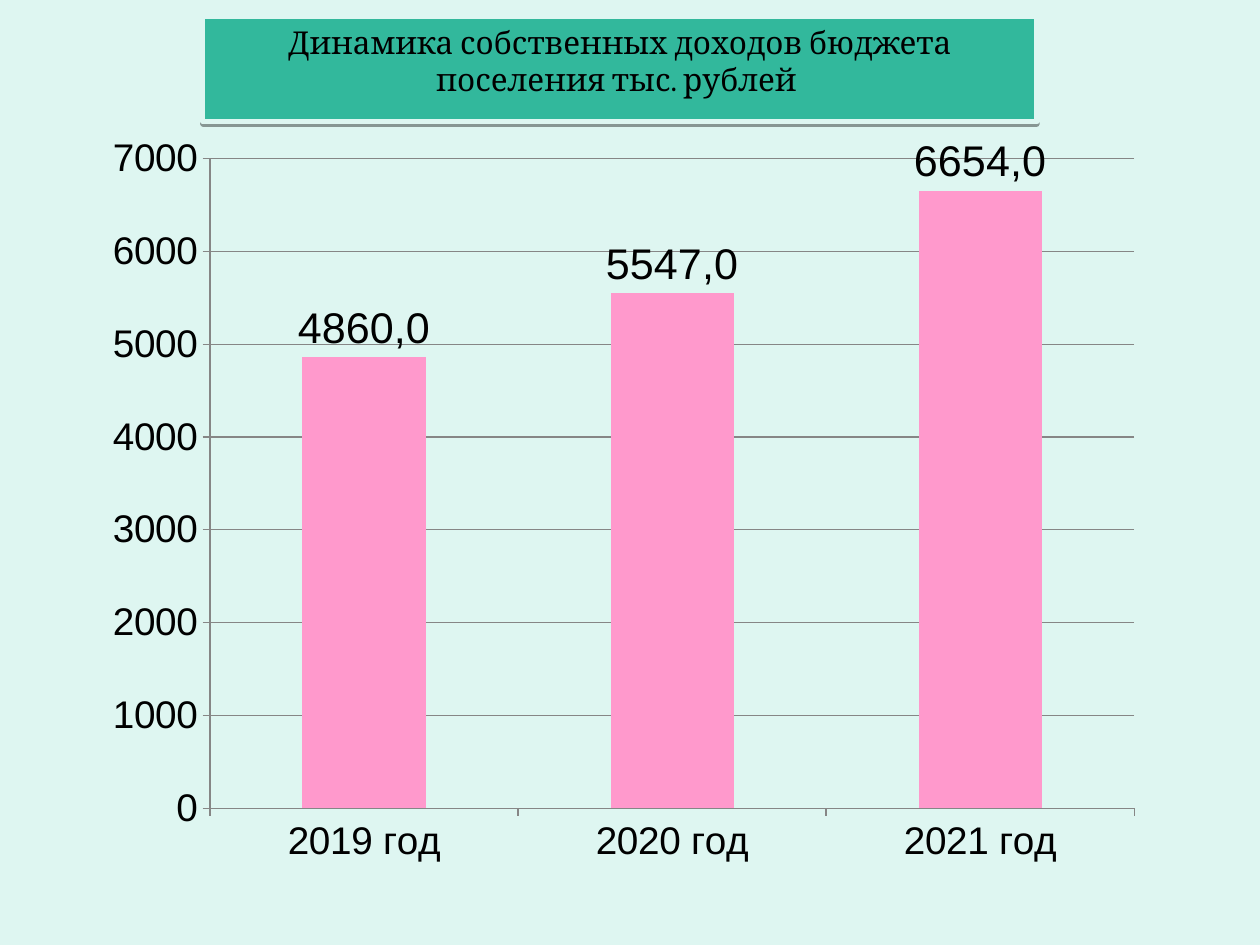
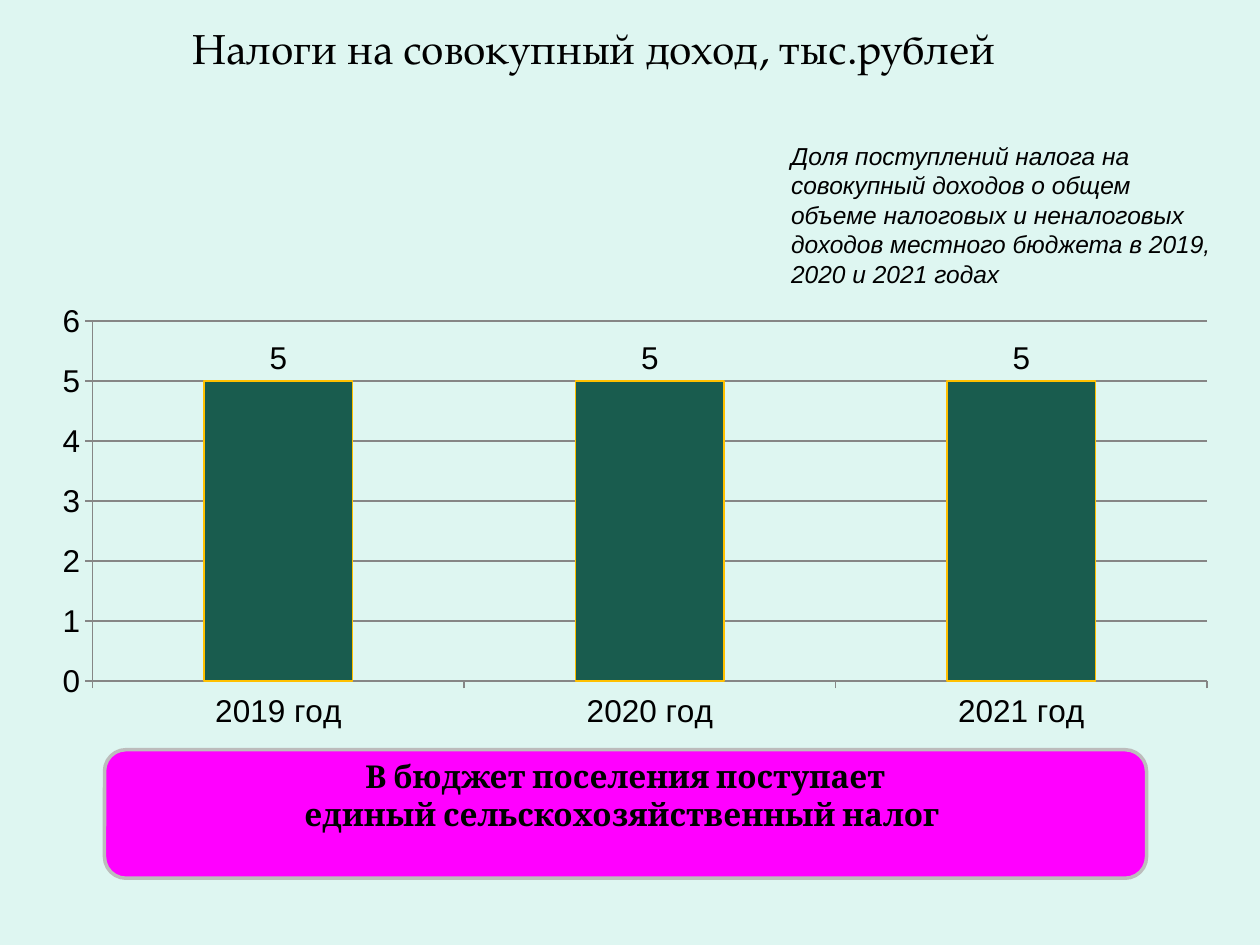
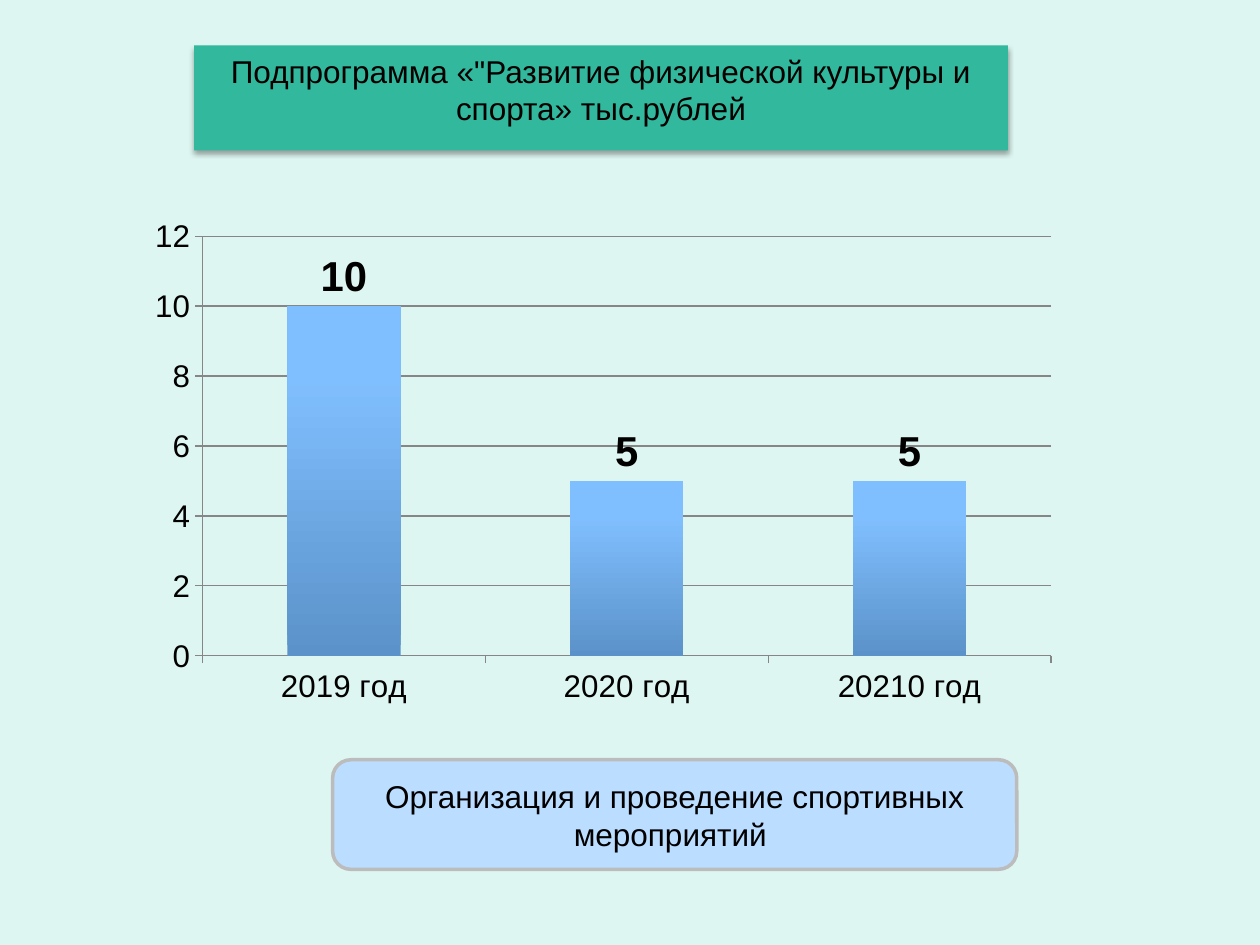
from dataclasses import dataclass

from lxml import etree
from pptx import Presentation
from pptx.chart.data import CategoryChartData
from pptx.dml.color import RGBColor
from pptx.enum.chart import XL_CHART_TYPE, XL_LABEL_POSITION, XL_TICK_MARK
from pptx.enum.shapes import MSO_SHAPE
from pptx.enum.text import MSO_ANCHOR, MSO_AUTO_SIZE, PP_ALIGN
from pptx.oxml.ns import qn
from pptx.util import Inches, Pt

COLUMNS = XL_CHART_TYPE.COLUMN_CLUSTERED
OUTSIDE_END = XL_LABEL_POSITION.OUTSIDE_END
TICK_OUT = XL_TICK_MARK.OUTSIDE
TICK_NONE = XL_TICK_MARK.NONE
ROUNDED = MSO_SHAPE.ROUNDED_RECTANGLE
TOP, MIDDLE = MSO_ANCHOR.TOP, MSO_ANCHOR.MIDDLE
GROW = MSO_AUTO_SIZE.SHAPE_TO_FIT_TEXT
FIXED = MSO_AUTO_SIZE.NONE
LEFT, CENTER = PP_ALIGN.LEFT, PP_ALIGN.CENTER

COLORS = {
    "background": "DEF6F1",
    "text": "000000",
    "band": "32B89C",
    "grid": "868686",
    "pink": "FF99CC",
    "green": "195C4E",
    "gold": "FFC000",
    "magenta": "FF00FF",
    "pale_blue": "BBDDFF",
    "sky": "80BFFF",
    "steel": "5B92C9",
    "border": "BCBCBC",
}
TITLE_ONLY_LAYOUT = 5


@dataclass
class Area:
    left: float
    top: float
    width: float
    height: float

    def lengths(self):
        return [Inches(side) for side in (self.left, self.top, self.width, self.height)]


@dataclass
class Shadow:
    blur: float
    distance: float
    opacity: int


@dataclass
class Title:
    text: str
    area: Area
    font: str
    size: float = 18
    fill: str | None = None
    line: str | None = None
    shadow: Shadow | None = None


@dataclass
class ColumnChart:
    area: Area
    plot: Area
    categories: tuple[str, ...]
    values: tuple[float, ...]
    maximum: float
    step: float
    size: float
    label_size: float
    fill: str
    fill_end: str | None = None
    line: str | None = None
    label_bold: bool = False
    label_format: str = "General"


@dataclass
class Callout:
    lines: tuple[str, ...]
    area: Area
    fill: str
    font: str
    bold: bool = False
    bottom_inset: float = 0.05


def color(name: str) -> RGBColor:
    return RGBColor.from_string(COLORS[name])


def style_font(font, *, name="Arial", size=18.0, bold=False, italic=False):
    font.name = name
    font.size = Pt(size)
    font.bold = bold
    font.italic = italic
    font.color.rgb = color("text")


def write(box, *lines: str, align=CENTER, anchor=TOP, fit=FIXED, **font_format):
    frame = box.text_frame
    frame.word_wrap = True
    frame.auto_size = fit
    frame.vertical_anchor = anchor
    for index, line in enumerate(lines):
        para = frame.add_paragraph() if index else frame.paragraphs[0]
        para.alignment = align
        span = para.add_run()
        span.text = line
        style_font(span.font, **font_format)


def paint(target, fill: str, line: str | None = None, width: float = 0.75):
    target.fill.solid()
    target.fill.fore_color.rgb = color(fill)
    if line:
        target.line.color.rgb = color(line)
        target.line.width = Pt(width)
    else:
        target.line.fill.background()


def add_shadow(box, shadow: Shadow):
    effects = etree.SubElement(box.element.spPr, qn("a:effectLst"))
    outer = etree.SubElement(
        effects, qn("a:outerShdw"), blurRad=str(Pt(shadow.blur)),
        dist=str(Pt(shadow.distance)), dir="5400000", rotWithShape="0",
    )
    shade = etree.SubElement(outer, qn("a:srgbClr"), val=COLORS["text"])
    etree.SubElement(shade, qn("a:alpha"), val=str(shadow.opacity * 1000))


def add_title(page, title: Title):
    box = page.shapes.title
    box.left, box.top, box.width, box.height = title.area.lengths()
    if title.fill:
        paint(box, title.fill, title.line, 3)
    if title.shadow:
        add_shadow(box, title.shadow)
    write(box, title.text, fit=GROW, name=title.font, size=title.size)


def add_callout(page, callout: Callout):
    box = page.shapes.add_shape(ROUNDED, *callout.area.lengths())
    box.shadow.inherit = False
    paint(box, callout.fill, "border", 2)
    box.text_frame.margin_bottom = Inches(callout.bottom_inset)
    write(box, *callout.lines, anchor=MIDDLE, name=callout.font, bold=callout.bold)


def place_plot(chart, plot: Area):
    plot_area = chart.element.find(".//" + qn("c:plotArea"))
    for old in plot_area.findall(qn("c:layout")):
        plot_area.remove(old)
    layout = etree.Element(qn("c:layout"))
    plot_area.insert(0, layout)
    manual = etree.SubElement(layout, qn("c:manualLayout"))
    settings = {
        "layoutTarget": "inner", "xMode": "edge", "yMode": "edge",
        "x": plot.left, "y": plot.top, "w": plot.width, "h": plot.height,
    }
    for tag, value in settings.items():
        etree.SubElement(manual, qn(f"c:{tag}"), val=str(value))


def add_column_chart(page, design: ColumnChart):
    data = CategoryChartData()
    data.categories = design.categories
    data.add_series("Series 1", design.values)
    chart = page.shapes.add_chart(COLUMNS, *design.area.lengths(), data).chart
    chart.has_legend = False
    chart.has_title = False
    style_font(chart.font, size=design.size)
    place_plot(chart, design.plot)

    for axis in (chart.category_axis, chart.value_axis):
        axis.major_tick_mark = TICK_OUT
        axis.minor_tick_mark = TICK_NONE
        axis.format.line.color.rgb = color("grid")
    chart.category_axis.has_major_gridlines = False
    scale = chart.value_axis
    scale.minimum_scale = 0
    scale.maximum_scale = design.maximum
    scale.major_unit = design.step
    scale.major_gridlines.format.line.color.rgb = color("grid")

    columns = chart.plots[0]
    columns.gap_width = 150
    columns.vary_by_categories = False
    columns.has_data_labels = True
    labels = columns.data_labels
    labels.show_value = True
    labels.position = OUTSIDE_END
    labels.number_format = design.label_format
    labels.number_format_is_linked = False
    style_font(labels.font, size=design.label_size, bold=design.label_bold)

    look = columns.series[0].format
    paint(look, design.fill, design.line)
    if design.fill_end:
        look.fill.gradient()
        look.fill.gradient_angle = 90
        bottom, top = look.fill.gradient_stops
        bottom.color.rgb = color(design.fill_end)
        top.color.rgb = color(design.fill)
        top.position = 0.8


def build_own_income(page):
    add_title(page, Title(
        "Динамика собственных доходов бюджета поселения тыс. рублей ",
        Area(1.61, 0.13, 6.62, 0.74), "Cambria", fill="band",
        line="background", shadow=Shadow(0, 1.6, 38),
    ))
    add_column_chart(page, ColumnChart(
        Area(0.75, 1.09, 8.49, 6.21), Area(0.108, 0.022, 0.864, 0.835),
        ("2019 год", "2020 год", "2021 год"), (4860, 5547, 6654),
        maximum=7000, step=1000, size=22.1, label_size=24.6,
        fill="pink", label_format='0",0"',
    ))


def build_income_taxes(page):
    add_title(page, Title(
        "Налоги на совокупный доход, тыс.рублей",
        Area(1.14, 0.13, 7.15, 0.5), "TeX Gyre Pagella", size=24,
    ))
    note = page.shapes.add_textbox(*Area(6.18, 1.07, 3.55, 1.28).lengths())
    write(
        note,
        "Доля поступлений налога на совокупный доходов о общем объеме налоговых "
        "и неналоговых доходов местного бюджета в 2019, 2020 и 2021 годах",
        align=LEFT, fit=GROW, size=14, italic=True,
    )
    add_column_chart(page, ColumnChart(
        Area(0.31, 2.34, 9.45, 3.52), Area(0.045, 0.059, 0.936, 0.812),
        ("2019 год", "2020 год", "2021 год"), (5, 5, 5),
        maximum=6, step=1, size=18, label_size=18, fill="green", line="gold",
    ))
    add_callout(page, Callout(
        ("В бюджет поселения поступает", "единый сельскохозяйственный налог "),
        Area(0.83, 5.95, 8.27, 1.02), "magenta", "Cambria",
        bold=True, bottom_inset=0.35,
    ))


def build_sport_program(page):
    add_title(page, Title(
        'Подпрограмма «"Развитие физической культуры и спорта» тыс.рублей',
        Area(1.54, 0.36, 6.46, 0.71), "Arial", fill="band",
        shadow=Shadow(3.1, 1.8, 35),
    ))
    add_column_chart(page, ColumnChart(
        Area(1.09, 1.73, 7.5, 4.26), Area(0.069, 0.034, 0.898, 0.782),
        ("2019 год", "2020 год", "20210 год"), (10, 5, 5),
        maximum=12, step=2, size=17.9, label_size=23.9,
        fill="sky", fill_end="steel", label_bold=True,
    ))
    add_callout(page, Callout(
        ("Организация и проведение спортивных мероприятий ",),
        Area(2.64, 6.03, 5.43, 0.87), "pale_blue", "Arial",
    ))


def main():
    deck = Presentation()
    deck.slide_width = Inches(10)
    deck.slide_height = Inches(7.5)
    backdrop = deck.slide_master.background.fill
    backdrop.solid()
    backdrop.fore_color.rgb = color("background")
    for build in (build_own_income, build_income_taxes, build_sport_program):
        build(deck.slides.add_slide(deck.slide_layouts[TITLE_ONLY_LAYOUT]))
    deck.save("out.pptx")


if __name__ == "__main__":
    main()
